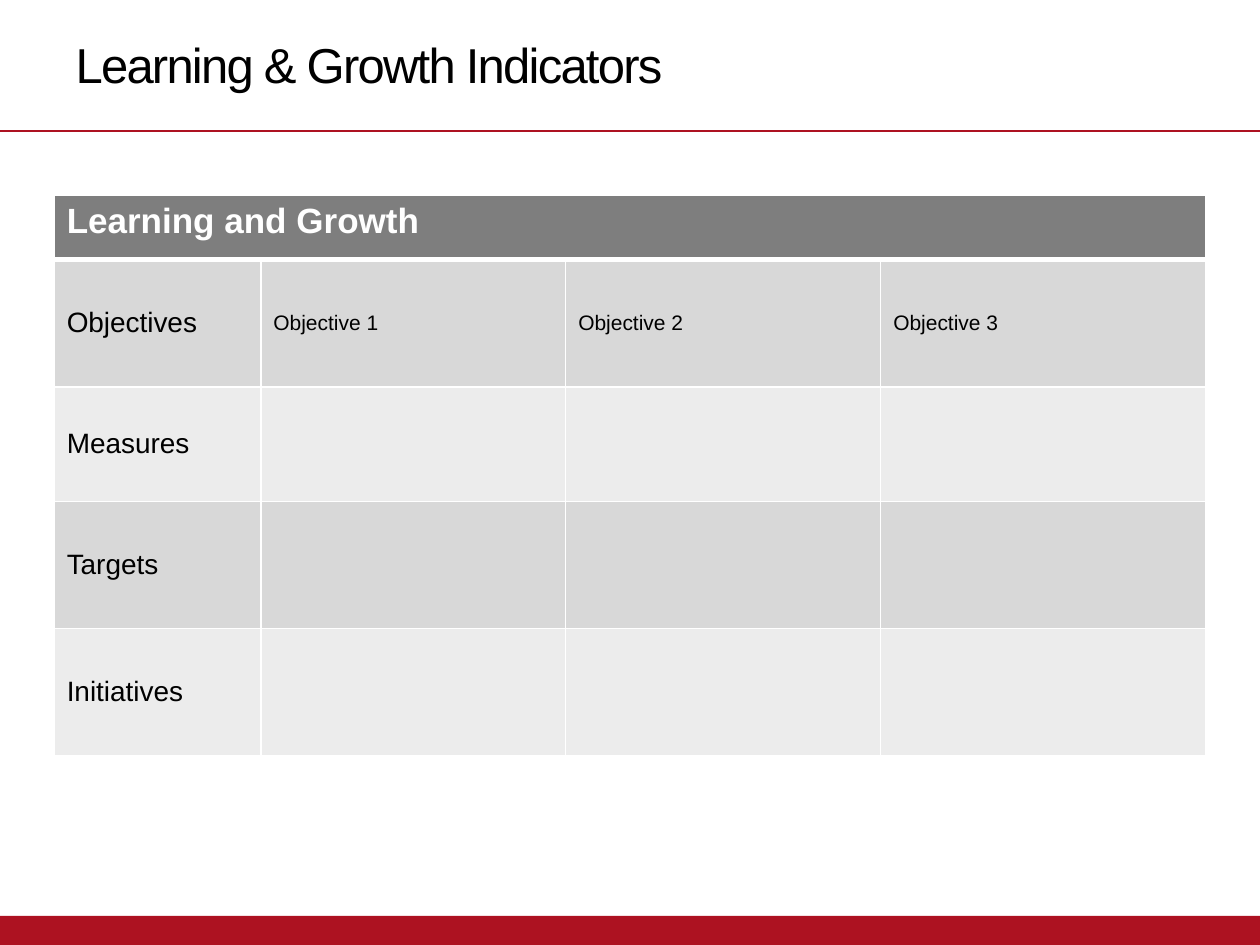
from lxml import etree
from pptx import Presentation
from pptx import util as u
from pptx.dml.color import RGBColor
from pptx.enum import shapes, text
from pptx.oxml import ns

SCALE = 9144
RED, BLACK, WHITE = "AD1221", "000000", "FFFFFF"
GREY, DARK, PALE = "7E7E7E", "D8D8D8", "ECECEC"
COLS = [164, 242, 250, 258]
ROWS = [51, 101, 91, 101, 101]
LABELS = ["Objectives", "Measures", "Targets", "Initiatives"]


def px(*vals):
    return [u.Emu(val * SCALE) for val in vals]


def color(code):
    return RGBColor.from_string(code)


def paint(item, code):
    item.fill.solid()
    item.fill.fore_color.rgb = color(code)


def write(frame, words, size=16, ink=BLACK, bold=False, track=0):
    para = frame.paragraphs[0]
    para.alignment = text.PP_ALIGN.LEFT
    run = para.add_run()
    run.text = words
    run.font.size = u.Pt(size)
    run.font.name = "Arial"
    run.font.bold = bold
    run.font.color.rgb = color(ink)
    if track:
        run.font._element.set("spc", str(track * 100))


def add_bar(slide):
    bar = slide.shapes.add_shape(shapes.MSO_SHAPE.RECTANGLE, *px(0, 727, 1000, 24))
    bar.shadow.inherit = False
    paint(bar, RED)
    bar.line.fill.background()


def add_rule(slide):
    rule = slide.shapes.add_connector(
        shapes.MSO_CONNECTOR.STRAIGHT, *px(0, 104, 1000, 104))
    rule.line.color.rgb = color(RED)
    rule.line.width = u.Pt(1.5)
    etree.SubElement(rule._element.spPr, ns.qn("a:effectLst"))


def add_title(slide):
    title = slide.shapes.title
    title.left, title.top, title.width, title.height = px(50, 15, 729, 72)
    frame = title.text_frame
    frame.vertical_anchor = text.MSO_ANCHOR.MIDDLE
    frame.margin_left, frame.margin_right = px(10, 10)
    frame.margin_top = frame.margin_bottom = 0
    write(frame, "Learning & Growth Indicators", size=28, track=-1)


def edge(cell, side, width):
    line = etree.SubElement(cell._tc.get_or_add_tcPr(), ns.qn(f"a:ln{side}"),
                            w=str(u.Pt(width)))
    fill = etree.SubElement(line, ns.qn("a:solidFill"))
    etree.SubElement(fill, ns.qn("a:srgbClr"), val=WHITE)


def style(cell, row):
    for side in "LRTB":
        thick = (row, side) in [(0, "B"), (1, "T")]
        edge(cell, side, 3 if thick else 1)
    paint(cell, GREY if row == 0 else DARK if row % 2 else PALE)
    if row:
        cell.vertical_anchor = text.MSO_ANCHOR.MIDDLE


def add_grid(slide):
    grid = slide.shapes.add_table(
        len(ROWS), len(COLS), *px(43, 155, sum(COLS), sum(ROWS))).table
    for col, width in zip(grid.columns, px(*COLS)):
        col.width = width
    for row, height in zip(grid.rows, px(*ROWS)):
        row.height = height
    for row in range(len(ROWS)):
        for col in range(len(COLS)):
            style(grid.cell(row, col), row)
    head = grid.cell(0, 0)
    head.merge(grid.cell(0, len(COLS) - 1))
    write(head.text_frame, "Learning and Growth", size=20, ink=WHITE, bold=True)
    for row, label in enumerate(LABELS, 1):
        write(grid.cell(row, 0).text_frame, label)
    for col in range(1, len(COLS)):
        write(grid.cell(1, col).text_frame, f"Objective {col}", size=12)


def main():
    deck = Presentation()
    deck.slide_width, deck.slide_height = px(1000, 750)
    slide = deck.slides.add_slide(deck.slide_layouts[5])
    add_bar(slide)
    add_rule(slide)
    add_title(slide)
    add_grid(slide)
    deck.save("out.pptx")


if __name__ == "__main__":
    main()
